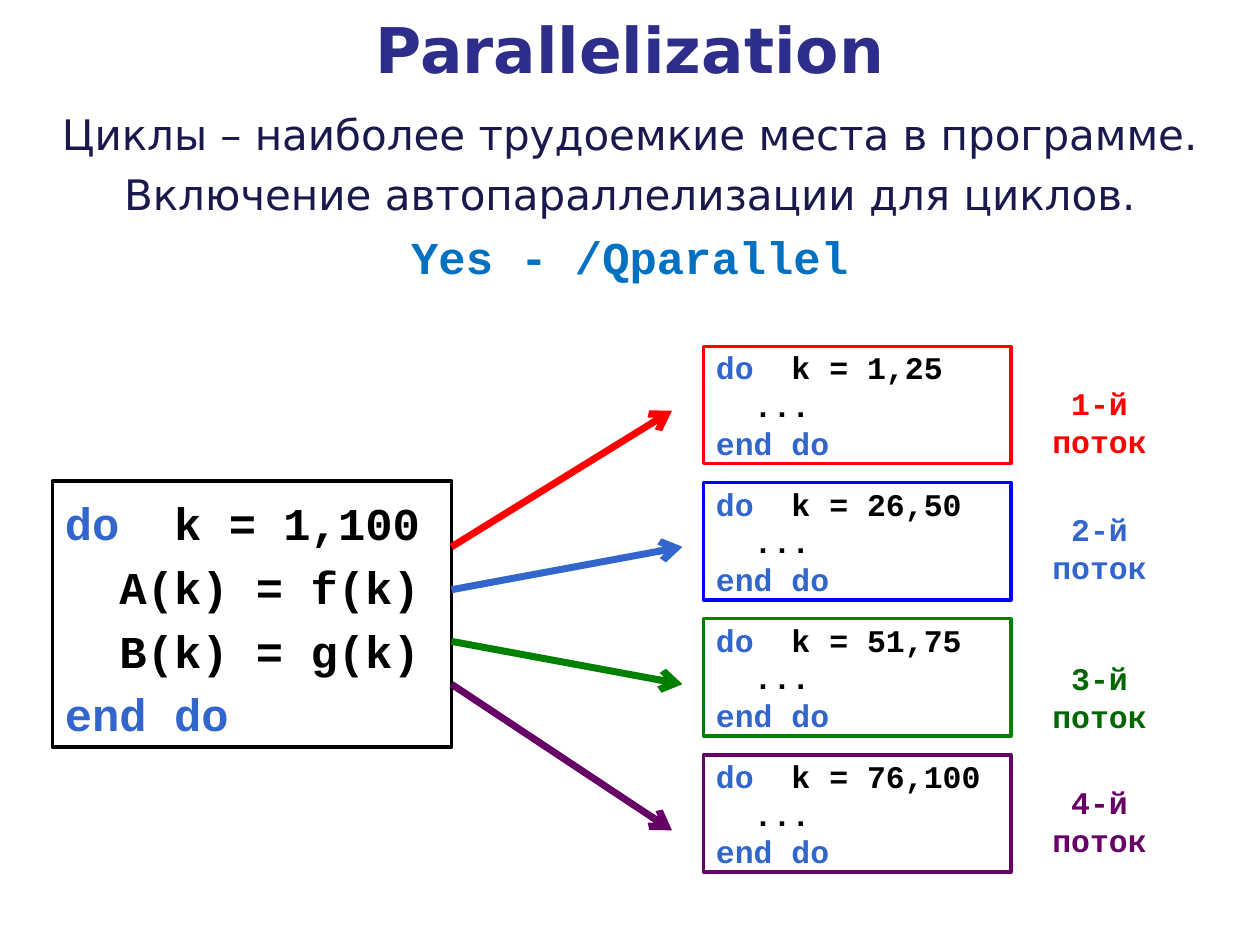
import pptx
import pptx.dml.color
import pptx.enum.shapes
import pptx.enum.text
import pptx.oxml.ns
import pptx.util
from lxml import etree

Pt = pptx.util.Pt
RGBColor = pptx.dml.color.RGBColor
Align = pptx.enum.text.PP_ALIGN
Anchor = pptx.enum.text.MSO_ANCHOR

BLACK = RGBColor(0x00, 0x00, 0x00)
INDIGO = RGBColor(0x2D, 0x2D, 0x8A)
NAVY = RGBColor(0x19, 0x19, 0x4D)
OPTION_BLUE = RGBColor(0x00, 0x70, 0xC0)
KEYWORD_BLUE = RGBColor(0x33, 0x66, 0xCC)
RED = RGBColor(0xFF, 0x00, 0x00)
BLUE = RGBColor(0x00, 0x00, 0xFF)
GREEN = RGBColor(0x00, 0x80, 0x00)
DARK_GREEN = RGBColor(0x00, 0x66, 0x00)
PURPLE = RGBColor(0x66, 0x00, 0x66)

SANS = "DejaVu Sans"
MONO = "Courier New"

deck = pptx.Presentation()
deck.slide_width, deck.slide_height = Pt(720), Pt(540)
page = deck.slides.add_slide(deck.slide_layouts[6])


def write(box, lines, size=18, font=MONO, color=BLACK, bold=True, align=Align.LEFT,
          gap=0, margins=(7.2, 3.6, 7.2, 3.6), anchor=Anchor.TOP):
    """Fill a box; each line is a list of (text, format changes) pairs."""
    frame = box.text_frame
    frame.word_wrap = True
    frame.vertical_anchor = anchor
    (frame.margin_left, frame.margin_top,
     frame.margin_right, frame.margin_bottom) = map(Pt, margins)
    for index, line in enumerate(lines):
        para = frame.add_paragraph() if index else frame.paragraphs[0]
        para.alignment = align
        para.space_before = Pt(gap if index else 0)
        for text, changes in line:
            span = para.add_run()
            span.text = text
            span.font.size = Pt(changes.get("size", size))
            span.font.name = changes.get("font", font)
            span.font.bold = changes.get("bold", bold)
            span.font.color.rgb = changes.get("color", color)


def add_code_box(left, top, width, height, line_color):
    box = page.shapes.add_shape(pptx.enum.shapes.MSO_SHAPE.RECTANGLE,
                                Pt(left), Pt(top), Pt(width), Pt(height))
    box.shadow.inherit = False
    box.fill.background()
    box.line.color.rgb = line_color
    box.line.width = Pt(2)
    return box


# Title
title = page.shapes.add_textbox(Pt(0), Pt(0), Pt(720), Pt(50.4))
write(title, [[("Parallelization", {})]], size=36, font=SANS, color=INDIGO,
      align=Align.CENTER, margins=(7.2, 6, 7.2, 3.6))

# Introduction
intro = page.shapes.add_textbox(Pt(0), Pt(59.8), Pt(720), Pt(108))
option = {"size": 26, "font": MONO, "color": OPTION_BLUE, "bold": True}
write(intro, [[("Циклы – наиболее трудоемкие места в программе.", {})],
              [("Включение автопараллелизации для циклов.", {})],
              [("Yes - /Qparallel", option)]],
      size=24, font=SANS, color=NAVY, bold=False, align=Align.CENTER,
      gap=5.6, margins=(0, 2, 0, 0))

# Source loop
keyword = {"color": KEYWORD_BLUE}
loop = add_code_box(30, 275, 228, 152, BLACK)
write(loop, [[("do", keyword), ("  k = 1,100", {})],
             [("  A(k) = f(k)", {})],
             [("  B(k) = g(k)", {})],
             [("end do", keyword)]],
      size=26, gap=5.2, anchor=Anchor.BOTTOM)

# Threads: range, box line, arrow colour, arrow start y, arrow end, label colour, label top
threads = [
    ("1,25", RED, RED, 312.5, (384, 234.7), RED, 216),
    ("26,50", BLUE, KEYWORD_BLUE, 337, (390, 312.5), KEYWORD_BLUE, 288),
    ("51,75", GREEN, GREEN, 366.5, (390, 391), DARK_GREEN, 373),
    ("76,100", PURPLE, PURPLE, 391, (384, 474.5), PURPLE, 444.2),
]
for index, (span_range, box_color, arrow_color, start, end,
            label_color, label_top) in enumerate(threads):
    part = add_code_box(402, 198 + 77.8 * index, 175.7, 67, box_color)
    write(part, [[("do", keyword), (f"  k = {span_range}", {})],
                 [("  ...", {})],
                 [("end do", keyword)]],
          margins=(7.2, 0, 7.2, 0), anchor=Anchor.MIDDLE)

    arrow = page.shapes.add_connector(pptx.enum.shapes.MSO_CONNECTOR.STRAIGHT,
                                      Pt(258), Pt(start), Pt(end[0]), Pt(end[1]))
    arrow.line.color.rgb = arrow_color
    arrow.line.width = Pt(4)
    etree.SubElement(arrow.line._get_or_add_ln(), pptx.oxml.ns.qn("a:tailEnd"), type="arrow")
    etree.SubElement(arrow._element.spPr, pptx.oxml.ns.qn("a:effectLst"))

    # Narrow text area sets the number above the word
    label = page.shapes.add_textbox(Pt(594), Pt(label_top), Pt(111.6), Pt(28.8))
    write(label, [[(f"{index + 1}-й поток", {})]], color=label_color,
          align=Align.CENTER, margins=(3, 3.6, 46, 3.6))

deck.save("out.pptx")
